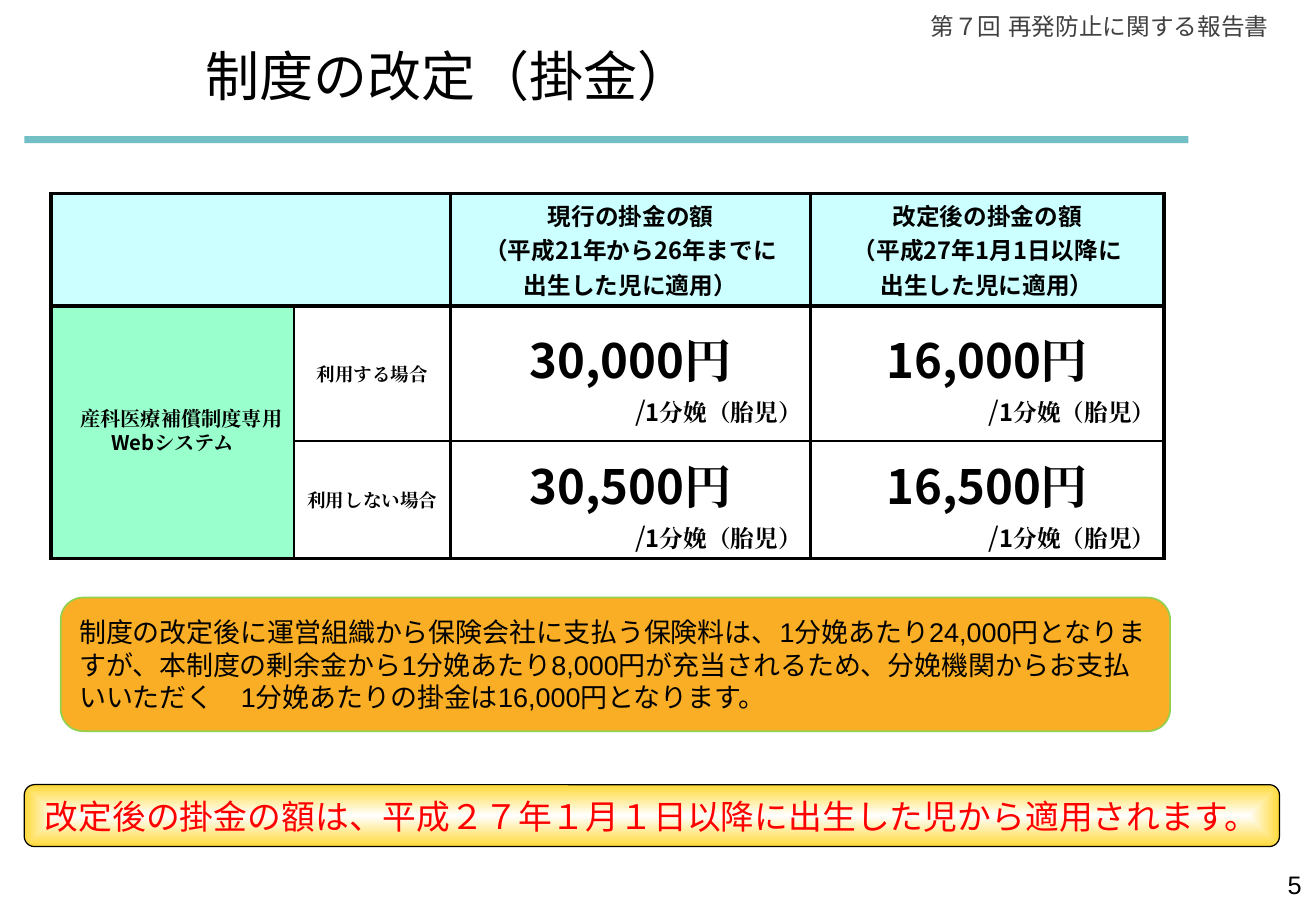
"""Build the slide on the revised premium of the compensation system."""
from itertools import product

from lxml.etree import SubElement
from pptx import Presentation
from pptx.dml.color import RGBColor
from pptx.enum.shapes import MSO_SHAPE
from pptx.enum.text import MSO_ANCHOR, MSO_AUTO_SIZE, PP_ALIGN
from pptx.oxml import parse_xml
from pptx.oxml.ns import nsdecls, qn
from pptx.util import Inches, Pt

BLACK = RGBColor(0x00, 0x00, 0x00)
GREY = RGBColor(0x40, 0x40, 0x40)
RED = RGBColor(0xFF, 0x00, 0x00)
WHITE = RGBColor(0xFF, 0xFF, 0xFF)
TEAL = RGBColor(0x72, 0xBF, 0xC5)
ORANGE = RGBColor(0xFA, 0xAE, 0x26)
GREEN = RGBColor(0x92, 0xD0, 0x50)
YELLOW = RGBColor(0xFF, 0xD9, 0x37)
PALE_BLUE = RGBColor(0xCC, 0xFF, 0xFF)
PALE_GREEN = RGBColor(0x99, 0xFF, 0xCC)

SANS, SERIF, GOTHIC = "Arial", "Cambria", "Noto Sans CJK JP"
GRID = Inches(0.1)
SLIDE_COLUMNS, SLIDE_ROWS = 108.3, 75
TABLE_COLUMNS = (20, 12.9, 29.6, 29.1)
TABLE_ROWS = (9.3, 11.1, 9.7)
THICK, THIN = Pt(2.25), Pt(1)

LEFT = {"alignment": PP_ALIGN.LEFT}
CENTER = {"alignment": PP_ALIGN.CENTER}
RIGHT = {"alignment": PP_ALIGN.RIGHT}
LABEL = {"alignment": PP_ALIGN.CENTER, "line_spacing": Pt(15)}
AMOUNT = {"alignment": PP_ALIGN.CENTER, "line_spacing": Pt(22)}
PER_BIRTH = {"alignment": PP_ALIGN.RIGHT, "line_spacing": Pt(22)}

HEADINGS = (
    ("現行の掛金の額", "（平成21年から26年までに", "出生した児に適用）"),
    ("改定後の掛金の額", "（平成27年1月1日以降に", "出生した児に適用）"),
)
USAGE = (
    ("利用する場合", "30,000円", "16,000円"),
    ("利用しない場合", "30,500円", "16,500円"),
)


def cells(*counts):
    """Turn grid counts into lengths."""
    return [int(GRID * count) for count in counts]


def apply(target, formats):
    """Set each attribute of the target from a dict."""
    for name, value in formats.items():
        setattr(target, name, value)


def add_run(paragraph, text, size, family, east=None, color=BLACK, bold=False):
    """Add a run with its Latin and East Asian fonts."""
    run = paragraph.add_run()
    run.text = text
    apply(run.font, {"size": Pt(size), "name": family, "bold": bold})
    run.font.color.rgb = color
    east_font = run.font._element.makeelement(qn("a:ea"), {"typeface": east or family})
    run.font._element.find(qn("a:latin")).addnext(east_font)


def write(frame, lines):
    """Fill a text frame with (paragraph format, runs) lines."""
    for index, (formats, runs) in enumerate(lines):
        paragraph = frame.add_paragraph() if index else frame.paragraphs[0]
        apply(paragraph, formats)
        for run in runs:
            add_run(paragraph, **run)


def add_label(slide, place, formats, run):
    """Add a wrapped one-line text box."""
    frame = slide.shapes.add_textbox(*cells(*place)).text_frame
    frame.word_wrap = True
    write(frame, [(formats, [run])])


def add_title(slide, place, run):
    """Place and format the title placeholder."""
    title = slide.shapes.title
    apply(title, dict(zip(("left", "top", "width", "height"), cells(*place))))
    apply(title.text_frame, {"word_wrap": True, "auto_size": MSO_AUTO_SIZE.NONE,
                             "vertical_anchor": MSO_ANCHOR.TOP})
    write(title.text_frame, [(CENTER, [run])])


def add_panel(slide, kind, place, fill, outline=None, weight=0):
    """Add a flat filled shape with an optional outline."""
    panel = slide.shapes.add_shape(kind, *cells(*place))
    panel.shadow.inherit = False
    panel.fill.solid()
    panel.fill.fore_color.rgb = fill
    if outline is None:
        panel.line.fill.background()
    else:
        panel.line.color.rgb = outline
        panel.line.width = Pt(weight)
    apply(panel.text_frame, {"word_wrap": True, "vertical_anchor": MSO_ANCHOR.MIDDLE})
    return panel


def glow(panel, inner, outer):
    """Give a panel a rectangular gradient from its centre."""
    solid = panel._element.spPr.find(qn("a:solidFill"))
    gradient = parse_xml(
        f'<a:gradFill {nsdecls("a")} rotWithShape="1"><a:gsLst>'
        f'<a:gs pos="0"><a:srgbClr val="{inner}"/></a:gs>'
        f'<a:gs pos="100000"><a:srgbClr val="{outer}"/></a:gs></a:gsLst>'
        '<a:path path="rect"><a:fillToRect l="50000" t="50000" r="50000" b="50000"/>'
        '</a:path></a:gradFill>')
    solid.getparent().replace(solid, gradient)


def draw_borders(cell, row, column):
    """Draw black borders, thin between the usage rows and labels."""
    thin_sides = {
        "lnL": row > 0 and column == 1,
        "lnR": row > 0 and column == 0,
        "lnT": row == 2 and column > 0,
        "lnB": row == 1 and column > 0,
    }
    properties = cell._tc.get_or_add_tcPr()
    for side, is_thin in thin_sides.items():
        border = SubElement(properties, qn(f"a:{side}"), w=str(THIN if is_thin else THICK))
        ink = SubElement(border, qn("a:solidFill"))
        SubElement(ink, qn("a:srgbClr"), val=str(BLACK))


def cell_run(text, size, east=SERIF, bold=True):
    """Describe a run of table text."""
    return {"text": text, "size": size, "family": GOTHIC, "east": east, "bold": bold}


def fill_premiums(table):
    """Write the headings, usage labels and amounts."""
    for column, heading in enumerate(HEADINGS, 2):
        write(table.cell(0, column).text_frame,
              [(CENTER, [cell_run(line, 14, GOTHIC)]) for line in heading])
    system = table.cell(1, 0).text_frame
    write(system, [({"alignment": PP_ALIGN.JUSTIFY}, [cell_run("産科医療補償制度専用", 12)]),
                   (LABEL, [cell_run("Webシステム", 12)])])
    system.paragraphs[0]._p.get_or_add_pPr().set("indent", str(Inches(0.17)))
    for row, (usage, *amounts) in enumerate(USAGE, 1):
        write(table.cell(row, 1).text_frame, [(LABEL, [cell_run(usage, 11)])])
        for column, amount in enumerate(amounts, 2):
            cell = table.cell(row, column)
            cell.margin_top = Pt(22)
            write(cell.text_frame, [
                (AMOUNT, [cell_run(amount, 28)]),
                (PER_BIRTH, [cell_run("/", 16, bold=False), cell_run("1分娩（胎児）", 14)]),
            ])


def add_premium_table(slide, left, top):
    """Add the table of current and revised premiums."""
    place = cells(left, top, sum(TABLE_COLUMNS), sum(TABLE_ROWS))
    table = slide.shapes.add_table(len(TABLE_ROWS), len(TABLE_COLUMNS), *place).table
    apply(table, {"first_row": False, "horz_banding": False})
    for column, width in zip(table.columns, cells(*TABLE_COLUMNS)):
        column.width = width
    for row, height in zip(table.rows, cells(*TABLE_ROWS)):
        row.height = height
    for row, column in product(range(len(TABLE_ROWS)), range(len(TABLE_COLUMNS))):
        cell = table.cell(row, column)
        apply(cell, {"margin_left": Inches(0.07), "margin_right": Inches(0.07),
                     "margin_top": 0, "margin_bottom": 0,
                     "vertical_anchor": MSO_ANCHOR.MIDDLE})
        draw_borders(cell, row, column)
        cell.fill.solid()
        cell.fill.fore_color.rgb = (
            PALE_BLUE if row == 0 else PALE_GREEN if column == 0 else WHITE)
    table.cell(0, 0).merge(table.cell(0, 1))
    table.cell(1, 0).merge(table.cell(2, 0))
    fill_premiums(table)


def main():
    """Build and save the slide."""
    deck = Presentation()
    deck.slide_width, deck.slide_height = cells(SLIDE_COLUMNS, SLIDE_ROWS)
    slide = deck.slides.add_slide(deck.slide_layouts[5])
    add_panel(slide, MSO_SHAPE.RECTANGLE, (2, 11.2, 95.8, 0.6), TEAL)
    add_label(slide, (73.8, 0.5, 31.6, 3.4), RIGHT,
              {"text": "第７回 再発防止に関する報告書", "size": 14, "family": SANS, "color": GREY})
    notice = add_panel(slide, MSO_SHAPE.ROUNDED_RECTANGLE, (2, 64.6, 103.3, 5.1),
                       YELLOW, BLACK, 0.75)
    glow(notice, WHITE, YELLOW)
    write(notice.text_frame, [(CENTER, [{
        "text": "改定後の掛金の額は、平成２７年１月１日以降に出生した児から適用されます。",
        "size": 20, "family": SANS, "color": RED}])])
    explanation = add_panel(slide, MSO_SHAPE.ROUNDED_RECTANGLE, (5, 49.2, 91.3, 11),
                            ORANGE, GREEN, 1)
    write(explanation.text_frame, [(LEFT, [{
        "text": "制度の改定後に運営組織から保険会社に支払う保険料は、1分娩あたり24,000円となりますが、"
                "本制度の剰余金から1分娩あたり8,000円が充当されるため、分娩機関からお支払いいただく"
                "　1分娩あたりの掛金は16,000円となります。",
        "size": 16, "family": SANS}])])
    add_premium_table(slide, 4.2, 15.9)
    add_title(slide, (0, 3, 73.9, 9.3),
              {"text": "制度の改定（掛金）", "size": 32, "family": GOTHIC})
    add_label(slide, (82.8, 71.1, 25.3, 3.8), RIGHT,
              {"text": "5", "size": 15, "family": SANS})
    deck.save("out.pptx")


if __name__ == "__main__":
    main()
